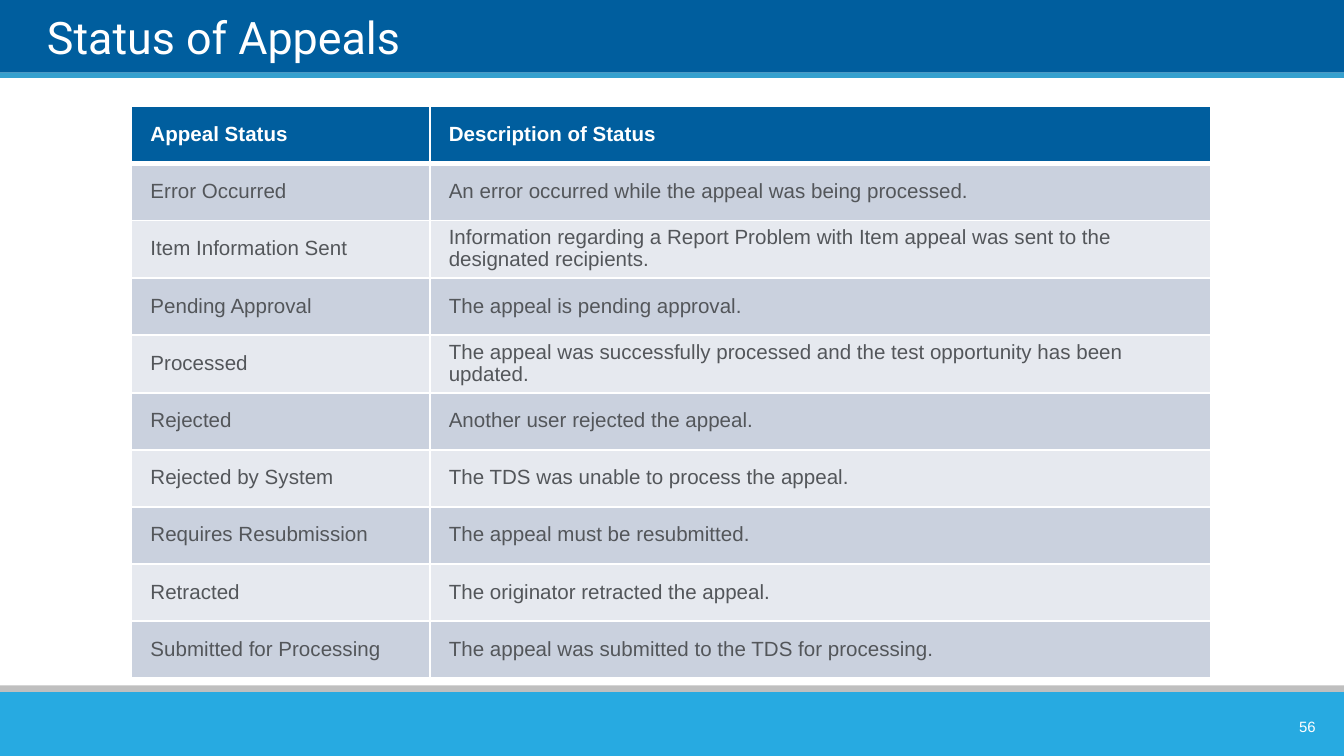
from dataclasses import dataclass

from lxml.etree import SubElement
from pptx import Presentation
from pptx.dml.color import RGBColor as RGB
from pptx.enum.shapes import MSO_SHAPE as Shape
from pptx.enum.text import MSO_ANCHOR as Anchor, PP_ALIGN as Align
from pptx.oxml.ns import qn
from pptx.util import Inches, Pt


@dataclass(frozen=True)
class Theme:
    navy: str = "005E9E"
    blue: str = "35A0CE"
    sky: str = "27AAE1"
    gray: str = "BFBFBF"
    white: str = "FFFFFF"
    ink: str = "53565A"
    bands: tuple = ("CAD1DE", "E6E9EF")
    head: str = "Roboto"
    body: str = "Arial"
    title: int = 24
    cell: int = 11
    page: int = 8


THEME = Theme()

ROWS = [
    ("Appeal Status", "Description of Status"),
    ("Error Occurred", "An error occurred while the appeal was being processed."),
    ("Item Information Sent", "Information regarding a Report Problem with Item "
     "appeal was sent to the designated recipients."),
    ("Pending Approval", "The appeal is pending approval."),
    ("Processed", "The appeal was successfully processed and the test "
     "opportunity has been updated."),
    ("Rejected", "Another user rejected the appeal."),
    ("Rejected by System", "The TDS was unable to process the appeal."),
    ("Requires Resubmission", "The appeal must be resubmitted."),
    ("Retracted", "The originator retracted the appeal."),
    ("Submitted for Processing", "The appeal was submitted to the TDS for processing."),
]


def style(para, face, size, color, bold=False):
    font = para.font
    font.name, font.size, font.bold = face, Pt(size), bold
    font.color.rgb = RGB.from_string(color)


def add_bar(slide, top, height, color):
    bar = slide.shapes.add_shape(
        Shape.RECTANGLE, 0, Inches(top), Inches(10), Inches(height))
    bar.shadow.inherit = False
    bar.fill.solid()
    bar.fill.fore_color.rgb = RGB.from_string(color)
    bar.line.fill.background()


def add_label(slide, text, spot, face, size, anchor, align, pads=(0, 0)):
    box = slide.shapes.add_textbox(*map(Inches, spot))
    frame = box.text_frame
    frame.word_wrap = True
    frame.vertical_anchor = anchor
    frame.margin_left = frame.margin_right = Inches(pads[0])
    frame.margin_top = frame.margin_bottom = Inches(pads[1])
    para = frame.paragraphs[0]
    para.text, para.alignment = text, align
    style(para, face, size, THEME.white)


def add_edges(cell, top, base):
    props = cell._tc.get_or_add_tcPr()
    for side, width in (("L", 1), ("R", 1), ("T", top), ("B", base)):
        line = SubElement(props, qn(f"a:ln{side}"), w=str(Pt(width)))
        fill = SubElement(line, qn("a:solidFill"))
        SubElement(fill, qn("a:srgbClr"), val=THEME.white)


def fill_cell(cell, text, row):
    head = row == 0
    # A thick rule parts the header from the body
    add_edges(cell, 3 if row == 1 else 1, 3 if head else 1)
    cell.fill.solid()
    color = THEME.navy if head else THEME.bands[(row - 1) % 2]
    cell.fill.fore_color.rgb = RGB.from_string(color)
    cell.vertical_anchor = Anchor.MIDDLE
    cell.margin_left = cell.margin_right = Inches(0.08)
    cell.margin_top = cell.margin_bottom = Inches(0.04)
    para = cell.text_frame.paragraphs[0]
    para.text = text
    para.line_spacing = 0.95
    para._p.get_or_add_pPr().set("marL", str(Inches(0.06)))
    style(para, THEME.body, THEME.cell, THEME.white if head else THEME.ink, head)


def add_grid(slide, rows, left, top, widths, height):
    table = slide.shapes.add_table(
        len(rows), len(widths), Inches(left), Inches(top),
        Inches(sum(widths)), Inches(height)).table
    for col, width in zip(table.columns, widths):
        col.width = Inches(width)
    for r, texts in enumerate(rows):
        table.rows[r].height = Inches(height / len(rows))
        for c, text in enumerate(texts):
            fill_cell(table.cell(r, c), text, r)


def main():
    deck = Presentation()
    # Widescreen, 16 to 9
    deck.slide_width = Inches(10)
    deck.slide_height = Inches(10 * 9 / 16)
    slide = deck.slides.add_slide(deck.slide_layouts[6])

    # Header and footer bands
    add_bar(slide, -0.01, 0.55, THEME.navy)
    add_bar(slide, 0.54, 0.04, THEME.blue)
    add_bar(slide, 5.1, 0.11, THEME.gray)
    add_bar(slide, 5.15, 0.48, THEME.sky)

    # Title
    add_label(slide, "Status of Appeals", (0.35, 0.05, 9.04, 0.42),
              THEME.head, THEME.title, Anchor.BOTTOM, Align.LEFT)

    # Status table
    add_grid(slide, ROWS, 0.98, 0.79, (2.22, 5.81), 4.25)

    # Page number
    add_label(slide, "56", (9.28, 5.29, 0.58, 0.23), THEME.body, THEME.page,
              Anchor.MIDDLE, Align.RIGHT, (0.07, 0.04))

    deck.save("out.pptx")


if __name__ == "__main__":
    main()
